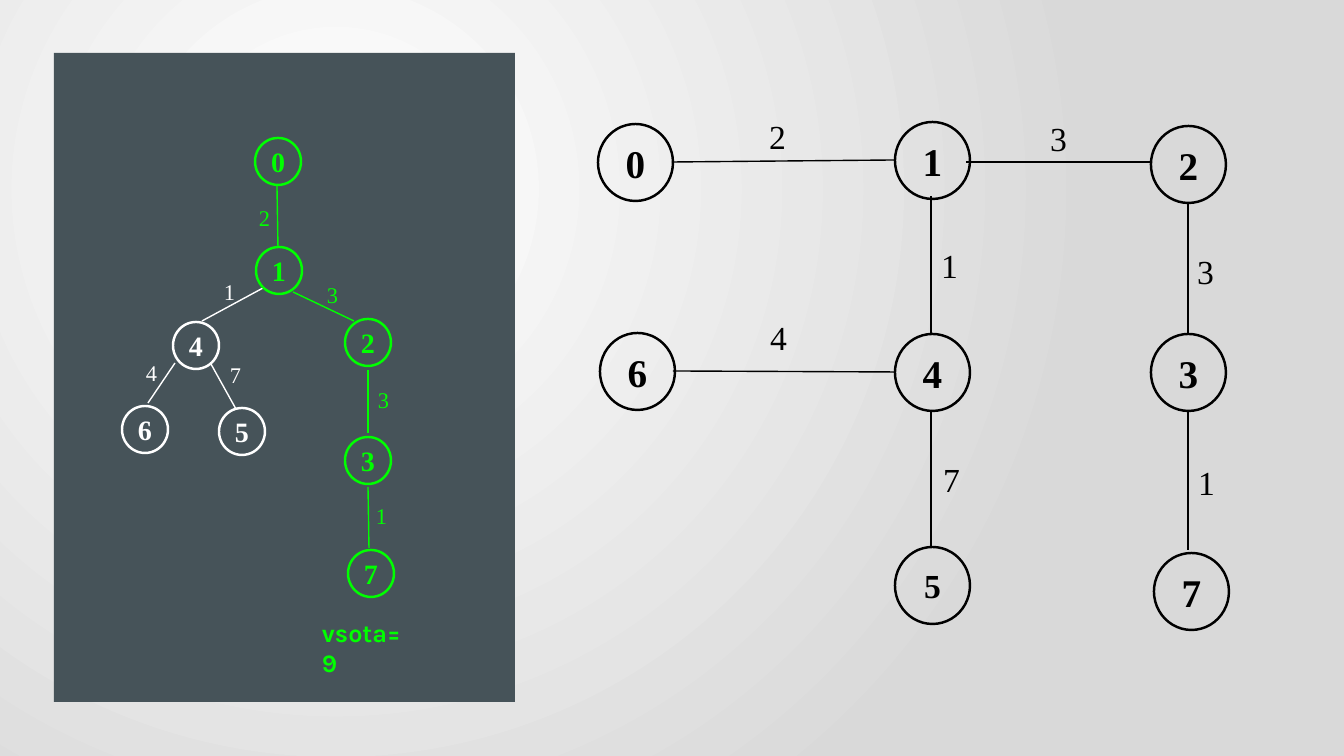
"""Draw a weighted graph beside its spanning tree with the longest path in green."""
from dataclasses import dataclass

from lxml import etree
from pptx import Presentation
from pptx import util as u
from pptx.dml.color import RGBColor
from pptx.enum import shapes, text
from pptx.oxml import ns

SCALE = 914400 / 100.8


def px(n):
    return u.Emu(round(n * SCALE))


@dataclass(frozen=True)
class Theme:
    black: str = "000000"
    white: str = "FFFFFF"
    green: str = "00FF00"
    panel: str = "465359"
    glow: tuple = ("FFFFFF", "D9D9D9")
    serif: str = "Times New Roman"
    sans: str = "Karla"
    graph_node: int = 28
    graph_weight: int = 24
    tree_node: int = 20
    tree_weight: int = 16
    total: int = 18
    outline: float = 1.75
    edge: float = 1


class Board:
    def __init__(self, slide, theme):
        self.s = slide
        self.t = theme

    def background(self):
        fill = self.s.background.fill
        fill.gradient()
        for stop, color in zip(fill.gradient_stops, self.t.glow):
            stop.color.rgb = RGBColor.from_string(color)
        grad = next(self.s.element.iter(ns.qn("a:gradFill")))
        grad.remove(grad.find(ns.qn("a:lin")))
        circle = etree.SubElement(grad, ns.qn("a:path"), {"path": "circle"})
        etree.SubElement(circle, ns.qn("a:fillToRect"),
                         l="50000", t="50000", r="100000", b="100000")

    def panel(self, x, y, w, h):
        sp = self.s.shapes.add_shape(shapes.MSO_SHAPE.RECTANGLE, px(x), px(y), px(w), px(h))
        sp.shadow.inherit = False
        sp.fill.solid()
        sp.fill.fore_color.rgb = RGBColor.from_string(self.t.panel)
        sp.line.fill.background()

    def set_text(self, tf, words, size, color, bold, align, font):
        tf.word_wrap = True
        p = tf.paragraphs[0]
        p.text = words
        p.alignment = align
        p.font.name = font
        p.font.size = u.Pt(size)
        p.font.bold = bold
        p.font.color.rgb = RGBColor.from_string(color)

    def node(self, name, x, y, w, h, size, color):
        sp = self.s.shapes.add_shape(shapes.MSO_SHAPE.OVAL, px(x), px(y), px(w), px(h))
        sp.shadow.inherit = False
        sp.fill.background()
        sp.line.color.rgb = RGBColor.from_string(color)
        sp.line.width = u.Pt(self.t.outline)
        tf = sp.text_frame
        tf.margin_left = tf.margin_right = tf.margin_top = tf.margin_bottom = 0
        tf.vertical_anchor = text.MSO_ANCHOR.MIDDLE
        self.set_text(tf, name, size, color, True, text.PP_ALIGN.CENTER, self.t.serif)

    def edge(self, x1, y1, x2, y2, color):
        line = self.s.shapes.add_connector(
            shapes.MSO_CONNECTOR.STRAIGHT, px(x1), px(y1), px(x2), px(y2))
        line.line.color.rgb = RGBColor.from_string(color)
        line.line.width = u.Pt(self.t.edge)
        etree.SubElement(line.element.spPr, ns.qn("a:effectLst"))

    def label(self, words, x, y, w, h, size, color, bold=False,
              align=text.PP_ALIGN.LEFT, font=None):
        tf = self.s.shapes.add_textbox(px(x), px(y), px(w), px(h)).text_frame
        self.set_text(tf, words, size, color, bold, align, font or self.t.serif)
        tf.auto_size = text.MSO_AUTO_SIZE.SHAPE_TO_FIT_TEXT


def draw_graph(board):
    t = board.t
    edges = [
        ("2", (754, 111), (672, 162, 895, 160)),
        ("3", (1035, 113), (966, 162, 1151, 162)),
        ("1", (926, 240), (931, 196, 931, 334)),
        ("3", (1182, 246), (1188, 203, 1188, 334)),
        ("4", (755, 312), (673, 371, 895, 372)),
        ("7", (928, 454), (931, 410, 931, 547)),
        ("1", (1183, 457), (1188, 412, 1188, 550)),
    ]
    nodes = [
        ("0", 598, 124), ("1", 895, 122), ("2", 1151, 126), ("3", 1151, 334),
        ("4", 895, 334), ("5", 895, 547), ("6", 600, 333), ("7", 1154, 553),
    ]
    for weight, spot, ends in edges:
        board.edge(*ends, t.black)
        board.label(weight, *spot, 47, 50, t.graph_weight, t.black,
                    align=text.PP_ALIGN.CENTER)
    for name, x, y in nodes:
        size = t.graph_weight if name == "5" else t.graph_node
        board.node(name, x, y, 75, 77, size, t.black)


def draw_tree(board):
    t = board.t
    edges = [
        ("2", (249, 199), (277, 185, 278, 248), t.green),
        ("1", (214, 273), (263, 288, 202, 321), t.white),
        ("3", (317, 276), (293, 292, 354, 321), t.green),
        ("3", (368, 381), (368, 370, 368, 433), t.green),
        ("1", (366, 497), (368, 487, 369, 548), t.green),
        ("4", (136, 354), (175, 363, 148, 403), t.white),
        ("7", (220, 356), (211, 364, 236, 409), t.white),
    ]
    nodes = [
        ("0", 255, 138, t.green), ("1", 256, 247, t.green),
        ("2", 345, 319, t.green), ("3", 345, 437, t.green),
        ("7", 348, 550, t.green), ("4", 173, 322, t.white),
        ("6", 122, 406, t.white), ("5", 219, 408, t.white),
    ]
    board.panel(54, 53, 461, 649)
    for weight, spot, ends, color in edges:
        board.edge(*ends, color)
        board.label(weight, *spot, 26, 37, t.tree_weight, color)
    for name, x, y, color in nodes:
        board.node(name, x, y, 46, 47, t.tree_node, color)
    board.label("vsota=9", 312, 612, 108, 40, t.total, t.green, bold=True, font=t.sans)


def main():
    prs = Presentation()
    prs.slide_width, prs.slide_height = px(1344), px(756)
    board = Board(prs.slides.add_slide(prs.slide_layouts[6]), Theme())
    board.background()
    draw_tree(board)
    draw_graph(board)
    prs.save("out.pptx")


if __name__ == "__main__":
    main()
